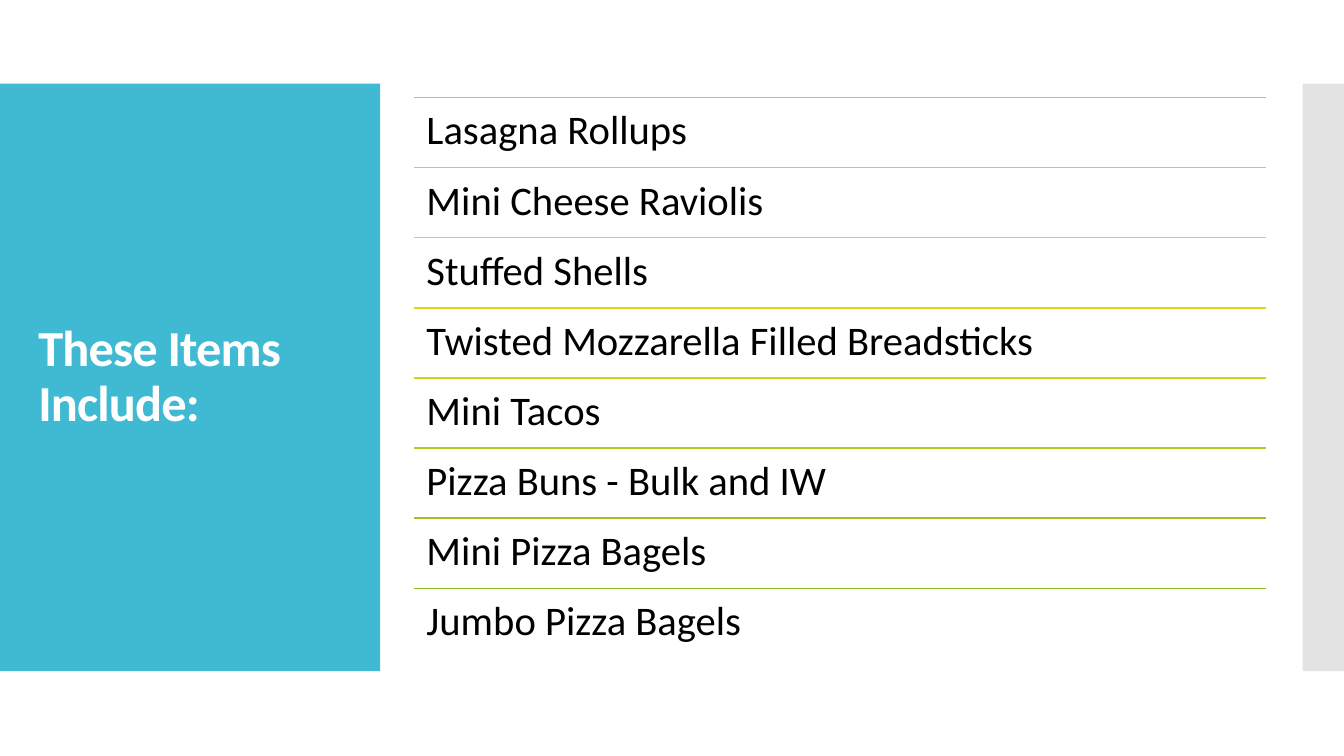
import pptx
import pptx.util
import pptx.dml.color
import pptx.enum.shapes
import pptx.enum.text
import pptx.oxml
import pptx.oxml.ns
from pptx.util import Inches
from pptx.dml.color import RGBColor

# Content: each item with the colour of the rule above it
TITLE = "These Items Include:"
ITEMS = [
    ("Lasagna Rollups", RGBColor(0xFA, 0xB9, 0x00)),
    ("Mini Cheese Raviolis", RGBColor(0xF0, 0xC6, 0x06)),
    ("Stuffed Shells", RGBColor(0xE7, 0xD0, 0x0B)),
    ("Twisted Mozzarella Filled Breadsticks", RGBColor(0xDE, 0xD8, 0x10)),
    ("Mini Tacos", RGBColor(0xCB, 0xD5, 0x15)),
    ("Pizza Buns - Bulk and IW", RGBColor(0xB5, 0xCC, 0x1A)),
    ("Mini Pizza Bagels", RGBColor(0xA2, 0xC3, 0x1F)),
    ("Jumbo Pizza Bagels", RGBColor(0x90, 0xBB, 0x23)),
]
FONT = "Calibri"
TEAL = RGBColor(0x40, 0xBA, 0xD2)
GRAY = RGBColor(0xC8, 0xC8, 0xC8)
WHITE = RGBColor(0xFF, 0xFF, 0xFF)
BLACK = RGBColor(0x00, 0x00, 0x00)

# Layout in inches
PANEL_TOP, PANEL_HEIGHT = 0.83, 5.83
LIST_LEFT, LIST_WIDTH = 4.11, 8.45
LIST_TOP, LIST_BOTTOM = 0.97, 6.53
ROW_HEIGHT = (LIST_BOTTOM - LIST_TOP) / len(ITEMS)


def add_panel(page, left, width, color):
    panel = page.shapes.add_shape(
        pptx.enum.shapes.MSO_SHAPE.RECTANGLE,
        Inches(left), Inches(PANEL_TOP), Inches(width), Inches(PANEL_HEIGHT))
    panel.shadow.inherit = False
    panel.fill.solid()
    panel.fill.fore_color.rgb = color
    panel.line.fill.background()
    return panel


def add_title(page):
    title = page.shapes.title
    title.left, title.top = Inches(0.28), Inches(1.23)
    title.width, title.height = Inches(3.22), Inches(5.03)
    frame = title.text_frame
    frame.text = TITLE
    frame.word_wrap = True
    frame.auto_size = pptx.enum.text.MSO_AUTO_SIZE.NONE
    frame.vertical_anchor = pptx.enum.text.MSO_ANCHOR.MIDDLE
    para = frame.paragraphs[0]
    para.alignment = pptx.enum.text.PP_ALIGN.LEFT
    para.line_spacing = 0.9
    para.font.name, para.font.size = FONT, pptx.util.Pt(36)
    para.font.bold = True
    para.font.color.rgb = WHITE
    # Slightly tightened letters
    para.runs[0].font._element.set("spc", "-60")
    # Bring the title in front of its panel
    page.shapes._spTree.append(title._element)


def add_item(page, top, text, color):
    rule = page.shapes.add_connector(
        pptx.enum.shapes.MSO_CONNECTOR.STRAIGHT, Inches(LIST_LEFT), Inches(top),
        Inches(LIST_LEFT + LIST_WIDTH), Inches(top))
    rule.line.color.rgb = color
    rule.line.width = pptx.util.Pt(0.85)
    rule._element.spPr.append(pptx.oxml.parse_xml(
        '<a:effectLst xmlns:a="http://schemas.openxmlformats.org/drawingml/2006/main"/>'))

    box = page.shapes.add_textbox(
        Inches(LIST_LEFT), Inches(top), Inches(LIST_WIDTH), Inches(ROW_HEIGHT))
    frame = box.text_frame
    frame.word_wrap = True
    frame.margin_left = frame.margin_right = Inches(0.12)
    frame.margin_top = frame.margin_bottom = Inches(0.12)
    para = frame.paragraphs[0]
    para.text = text
    para.line_spacing = 0.9
    para.font.name, para.font.size = FONT, pptx.util.Pt(29)
    para.font.color.rgb = BLACK


def main():
    deck = pptx.Presentation()
    deck.slide_width, deck.slide_height = Inches(13.33), Inches(7.5)
    page = deck.slides.add_slide(deck.slide_layouts[5])

    # Side panels, the right one half transparent
    add_panel(page, 0, 3.77, TEAL)
    strip = add_panel(page, 12.92, 0.41, GRAY)
    tint = strip._element.spPr.find(".//" + pptx.oxml.ns.qn("a:srgbClr"))
    tint.append(pptx.oxml.parse_xml(
        '<a:alpha xmlns:a="http://schemas.openxmlformats.org/drawingml/2006/main" val="50000"/>'))

    add_title(page)

    # Ruled list
    for row, (text, color) in enumerate(ITEMS):
        add_item(page, LIST_TOP + row * ROW_HEIGHT, text, color)

    deck.save("out.pptx")


if __name__ == "__main__":
    main()
